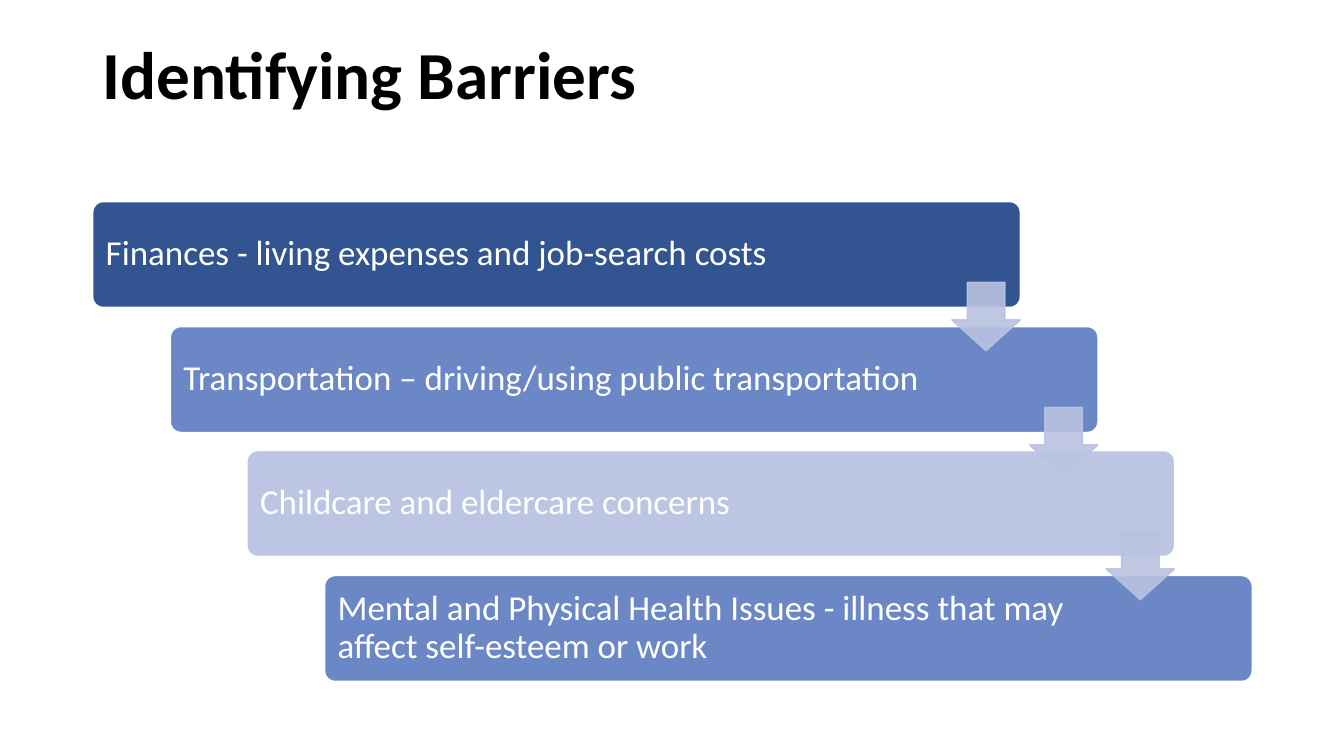
from lxml import etree
from pptx import Presentation
from pptx import util as u
from pptx.dml.color import RGBColor
from pptx.enum import shapes, text
from pptx.oxml import ns

PX = 9144  # EMU per px, 100 px to the inch
FONT = "Calibri"
HUES = {
    "ink": "000000",
    "white": "FFFFFF",
    "dark": "325491",
    "mid": "6C87C5",
    "pale": "BCC6E2",
    "arrow": "B9C2E1",
}
BARS = [
    ("Finances - living expenses and job-search costs", "dark"),
    ("Transportation – driving/using public transportation", "mid"),
    ("Childcare and eldercare concerns", "pale"),
    ("Mental and Physical Health Issues - illness that may "
     "affect self-esteem or work", "mid"),
]
LEFT, TOP, WIDE, HIGH = 92, 200, 920, 105
SPAN_X, SPAN_Y = 230, 371  # from the first bar to the last
ARROW = 68


def px(n):
    return u.Emu(n * PX)


def rgb(hue):
    return RGBColor.from_string(HUES[hue])


def write(shape, words, size, hue, bold=False, insets=(10, 10, 10, 10)):
    """Fill a shape with one left-aligned paragraph; insets run left, top, right, bottom."""
    frame = shape.text_frame
    frame.word_wrap = True
    frame.vertical_anchor = text.MSO_ANCHOR.MIDDLE
    (frame.margin_left, frame.margin_top,
     frame.margin_right, frame.margin_bottom) = map(px, insets)
    para = frame.paragraphs[0]
    para.text = words
    para.alignment = text.PP_ALIGN.LEFT
    para.line_spacing = 0.9
    font = para.font
    font.name, font.size, font.bold = FONT, u.Pt(size), bold
    font.color.rgb = rgb(hue)


def block(slide, kind, box, fill, line, adjs):
    shape = slide.shapes.add_shape(kind, *map(px, box))
    shape.shadow.inherit = False
    shape.fill.solid()
    shape.fill.fore_color.rgb = rgb(fill)
    shape.line.color.rgb = rgb(line)
    shape.line.width = u.Pt(1)
    for i, adj in enumerate(adjs):
        shape.adjustments[i] = adj
    return shape


def fade(shape, share):
    """Set the opacity of fill and line, in percent."""
    props = shape.element.spPr
    for color in props.iter(ns.qn("a:srgbClr")):
        etree.SubElement(color, ns.qn("a:alpha"), val=str(share * 1000))


def title(slide, words):
    box = slide.shapes.add_textbox(*map(px, (92, 40, 1150, 74)))
    write(box, words, 48, "ink", bold=True, insets=(10, 5, 10, 5))


def bar(slide, x, y, words, hue):
    shape = block(slide, shapes.MSO_SHAPE.ROUNDED_RECTANGLE,
                  (x, y, WIDE, HIGH), hue, "white", [0.1])
    write(shape, words, 25, "white", insets=(10, 10, 155, 10))


def arrow(slide, x, y):
    shape = block(slide, shapes.MSO_SHAPE.DOWN_ARROW,
                  (x, y, ARROW, ARROW), "arrow", "arrow", [0.55, 0.45])
    fade(shape, 90)


def main():
    deck = Presentation()
    deck.slide_width, deck.slide_height = px(1333), px(750)
    slide = deck.slides.add_slide(deck.slide_layouts[6])
    title(slide, "Identifying Barriers")

    last = len(BARS) - 1
    spots = [(LEFT + round(SPAN_X * i / last), TOP + round(SPAN_Y * i / last))
             for i in range(len(BARS))]
    for (x, y), (words, hue) in zip(spots, BARS):
        bar(slide, x, y, words, hue)
    for x, y in spots[:-1]:
        arrow(slide, x + WIDE - ARROW, y + 80)

    deck.save("out.pptx")


if __name__ == "__main__":
    main()
